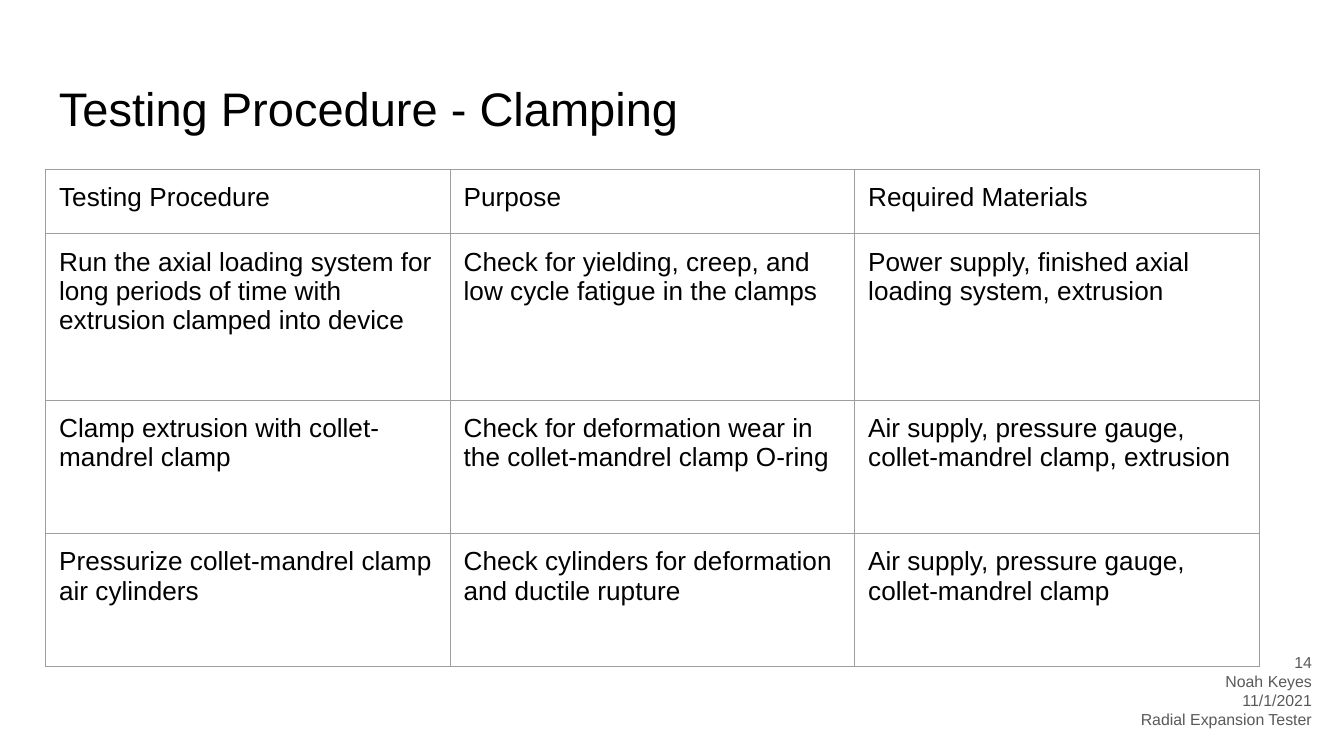
"""Build the clamping test procedure slide."""
from lxml import etree
from pptx import Presentation
from pptx.dml.color import RGBColor
from pptx.enum import text
from pptx.oxml.ns import qn
from pptx.util import Inches, Pt

COLORS = {"paper": "FFFFFF", "ink": "000000", "muted": "595959", "border": "9E9E9E"}
FONT = "Arial"
TITLE = "Testing Procedure - Clamping"
PROCEDURES = [
    ("Testing Procedure", "Purpose", "Required Materials"),
    (
        "Run the axial loading system for long periods of time with extrusion clamped into device",
        "Check for yielding, creep, and low cycle fatigue in the clamps",
        "Power supply, finished axial loading system, extrusion",
    ),
    (
        "Clamp extrusion with collet-mandrel clamp",
        "Check for deformation wear in the collet-mandrel clamp O-ring",
        "Air supply, pressure gauge, collet-mandrel clamp, extrusion",
    ),
    (
        "Pressurize collet-mandrel clamp air cylinders",
        "Check cylinders for deformation and ductile rupture",
        "Air supply, pressure gauge, collet-mandrel clamp",
    ),
]
FOOTER = ["14", "Noah Keyes", "11/1/2021", "Radial Expansion Tester"]
SLIDE_WIDTH = Inches(10)
SLIDE_HEIGHT = SLIDE_WIDTH * 9 // 16
COLUMN_WIDTH = 3.01
ROW_HEIGHTS = [0.48, 1.24, 0.99, 0.99]
MARGIN = Inches(0.1)


def write(frame, lines, size=14, color="ink", align=text.PP_ALIGN.LEFT):
    frame.word_wrap = True
    for index, line in enumerate(lines):
        paragraph = frame.paragraphs[0] if index == 0 else frame.add_paragraph()
        paragraph.alignment = align
        run = paragraph.add_run()
        run.text = line
        run.font.name = FONT
        run.font.size = Pt(size)
        run.font.color.rgb = RGBColor.from_string(COLORS[color])


def set_margins(holder):
    for side in ("left", "top", "right", "bottom"):
        setattr(holder, f"margin_{side}", MARGIN)


def add_text(slide, box, lines, anchor=text.MSO_ANCHOR.TOP, **style):
    frame = slide.shapes.add_textbox(*map(Inches, box)).text_frame
    set_margins(frame)
    frame.vertical_anchor = anchor
    write(frame, lines, **style)


def add_borders(cell):
    properties = cell._tc.get_or_add_tcPr()
    for position, side in enumerate(("lnL", "lnR", "lnT", "lnB")):
        line = etree.Element(qn(f"a:{side}"), w=str(Pt(0.75)))
        fill = etree.SubElement(line, qn("a:solidFill"))
        etree.SubElement(fill, qn("a:srgbClr"), val=COLORS["border"])
        properties.insert(position, line)


def add_procedure_table(slide, left, top):
    columns = len(PROCEDURES[0])
    table = slide.shapes.add_table(
        len(PROCEDURES), columns, Inches(left), Inches(top),
        Inches(COLUMN_WIDTH * columns), Inches(sum(ROW_HEIGHTS)),
    ).table
    table.first_row = table.horz_banding = False
    for column in table.columns:
        column.width = Inches(COLUMN_WIDTH)
    for row_index, (height, entries) in enumerate(zip(ROW_HEIGHTS, PROCEDURES)):
        table.rows[row_index].height = Inches(height)
        for column_index, entry in enumerate(entries):
            cell = table.cell(row_index, column_index)
            set_margins(cell)
            cell.fill.background()
            add_borders(cell)
            write(cell.text_frame, [entry])


def main():
    presentation = Presentation()
    presentation.slide_width = SLIDE_WIDTH
    presentation.slide_height = SLIDE_HEIGHT
    slide = presentation.slides.add_slide(presentation.slide_layouts[6])
    slide.background.fill.solid()
    slide.background.fill.fore_color.rgb = RGBColor.from_string(COLORS["paper"])
    add_text(slide, (0.34, 0.49, 9.32, 0.63), [TITLE], size=25.2)
    add_procedure_table(slide, 0.34, 1.26)
    add_text(slide, (8.28, 4.74, 1.58, 0.8), FOOTER, anchor=text.MSO_ANCHOR.MIDDLE,
             size=8.5, color="muted", align=text.PP_ALIGN.RIGHT)
    presentation.save("out.pptx")


if __name__ == "__main__":
    main()
